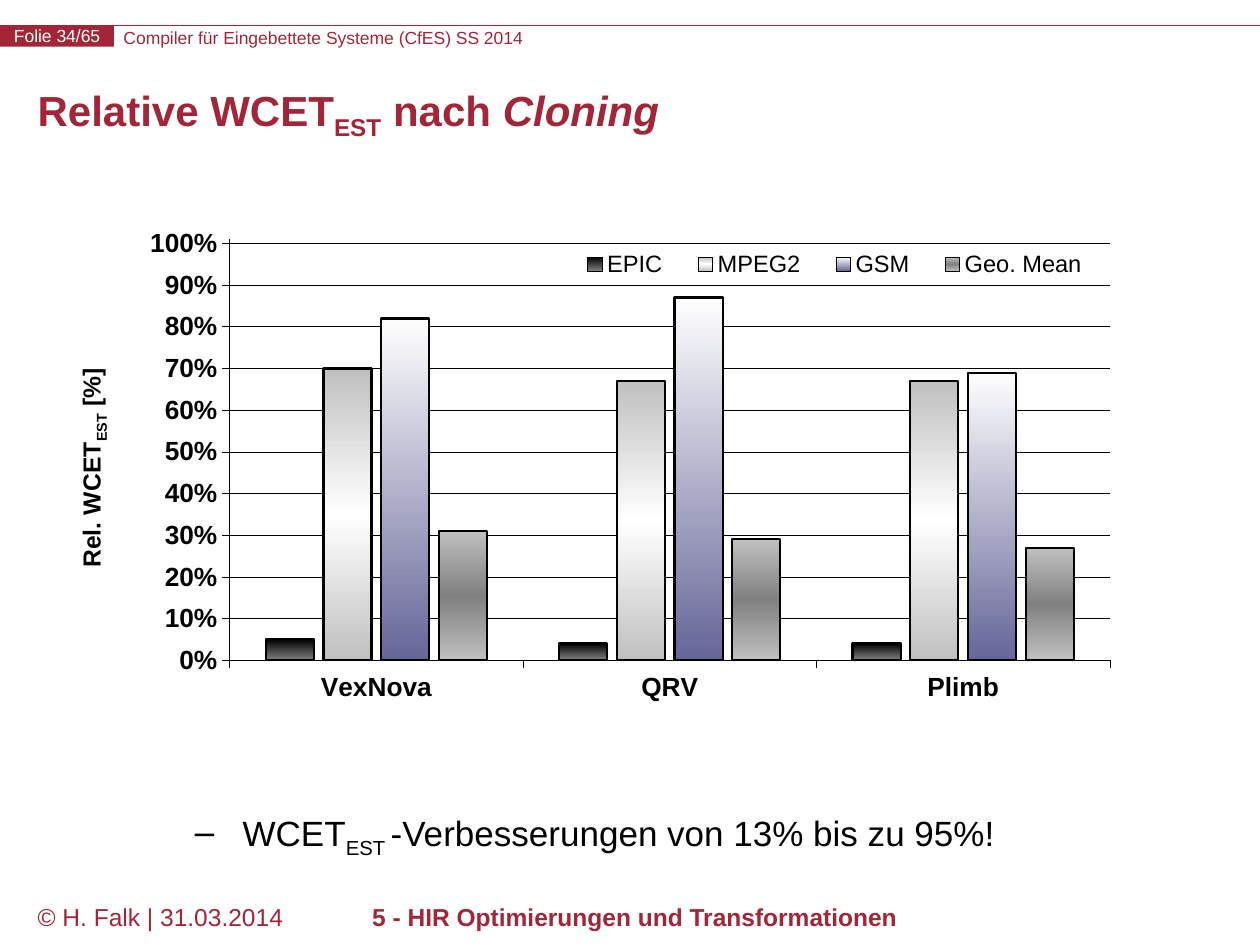
from pptx import Presentation, oxml, util as u
from pptx.chart import data
from pptx.dml import color
from pptx.enum import chart as ch, shapes, text
from pptx.oxml import ns

RED, BLACK, WHITE = "A32638", "000000", "FFFFFF"
FONT = "Arial"


def rgb(value):
    return color.RGBColor.from_string(value)


def add_span(para, words, size, ink=BLACK, bold=False, italic=False, baseline=0):
    """Append one run; baseline is a shift in percent, negative for subscript."""
    span = para.add_run()
    span.text = words
    font = span.font
    font.name, font.size, font.bold, font.italic = FONT, u.Pt(size), bold, italic
    font.color.rgb = rgb(ink)
    if baseline:
        span._r.get_or_add_rPr().set("baseline", str(baseline * 1000))


deck = Presentation()
deck.slide_width, deck.slide_height = u.Cm(25.4), u.Cm(19.05)
page = deck.slides.add_slide(deck.slide_layouts[6])

# Header rule and slide number
rule = page.shapes.add_connector(
    shapes.MSO_CONNECTOR.STRAIGHT, 0, u.Cm(0.51), deck.slide_width, u.Cm(0.51))
rule.line.color.rgb = rgb(RED)
rule.line.width = u.Pt(0.75)
rule._element.spPr.append(oxml.parse_xml(f"<a:effectLst {ns.nsdecls('a')}/>"))

number = page.shapes.add_shape(
    shapes.MSO_SHAPE.RECTANGLE, 0, u.Cm(0.51), u.Cm(2.3), u.Cm(0.43))
number.shadow.inherit = False
number.fill.solid()
number.fill.fore_color.rgb = rgb(RED)
number.line.fill.background()
frame = number.text_frame
frame.margin_left = frame.margin_right = frame.margin_top = frame.margin_bottom = 0
frame.word_wrap = False
frame.vertical_anchor = text.MSO_ANCHOR.MIDDLE
frame.paragraphs[0].alignment = text.PP_ALIGN.CENTER
add_span(frame.paragraphs[0], "Folie 34/65", 10, WHITE)

# Text boxes: place in cm, then runs as (words, format)
header = dict(size=10, ink=RED)
footer = dict(size=14, ink=RED)
heading = dict(size=24, ink=RED, bold=True)
body = dict(size=20)
texts = {
    "header": ((2.49, 0.54, 16.76, 0.43),
               [("Compiler für Eingebettete Systeme (CfES) SS 2014", header)]),
    "author": ((0.51, 18.06, 5.59, 1.27), [("© H. Falk | 31.03.2014", footer)]),
    "chapter": ((5.1, 18.06, 15.4, 1.27),
                [("5 - HIR Optimierungen und Transformationen", footer | dict(bold=True))]),
    "title": ((0.51, 1.52, 24.4, 1.83),
              [("Relative WCET", heading), ("EST", heading | dict(baseline=-25)),
               (" nach ", heading), ("Cloning", heading | dict(italic=True))]),
    "result": ((3.68, 16.05, 16.9, 1.27),
               [("WCET", body), ("EST ", body | dict(baseline=-25)),
                ("-Verbesserungen von 13% bis zu 95%!", body)]),
}
boxes = {}
for name, (place, spans) in texts.items():
    box = page.shapes.add_textbox(*map(u.Cm, place))
    box.text_frame.word_wrap = True
    for words, style in spans:
        add_span(box.text_frame.paragraphs[0], words, **style)
    boxes[name] = box.text_frame

frame = boxes["header"]
frame.margin_left = frame.margin_right = frame.margin_top = frame.margin_bottom = 0
boxes["chapter"].paragraphs[0].alignment = text.PP_ALIGN.CENTER
boxes["title"].vertical_anchor = text.MSO_ANCHOR.MIDDLE
boxes["title"].paragraphs[0].line_spacing = u.Pt(24)
para = boxes["result"].paragraphs[0]
para.line_spacing = 1.2
properties = para._p.get_or_add_pPr()
properties.set("marL", str(u.Cm(0.96)))
properties.set("indent", str(-u.Cm(0.96)))
properties.append(oxml.parse_xml(f'<a:buChar {ns.nsdecls("a")} char="–"/>'))

# Chart: values and gradient stops of each series
benchmarks = [
    ("EPIC", (0.05, 0.04, 0.04), (BLACK, "808080")),
    ("MPEG2", (0.7, 0.67, 0.67), ("C0C0C0", WHITE, "C0C0C0")),
    ("GSM", (0.82, 0.87, 0.69), ("FEFEFE", "666699")),
    ("Geo. Mean", (0.31, 0.29, 0.27), ("C0C0C0", "808080", "C0C0C0")),
]
chart_data = data.CategoryChartData(number_format="0%")
chart_data.categories = ["VexNova", "QRV", "Plimb"]
for name, values, _ in benchmarks:
    chart_data.add_series(name, values)
chart = page.shapes.add_chart(
    ch.XL_CHART_TYPE.COLUMN_CLUSTERED,
    *map(u.Cm, (1.45, 4.32, 20.93, 10.08)), chart_data).chart
chart.has_title = False
chart.font.name, chart.font.size = FONT, u.Pt(14.4)
chart.font.color.rgb = rgb(BLACK)

plot = chart.plots[0]
plot.vary_by_categories = False
plot.gap_width, plot.overlap = 150, -20
for series, (_, _, stops) in zip(plot.series, benchmarks):
    series.format.line.color.rgb = rgb(BLACK)
    series.format.line.width = u.Pt(1.25)
    series.format.fill.gradient()
    gradient = series._element.xpath("c:spPr/a:gradFill")[0]
    marks = "".join(
        f'<a:gs pos="{100000 * i // (len(stops) - 1)}"><a:srgbClr val="{stop}"/></a:gs>'
        for i, stop in enumerate(stops))
    gradient.getparent().replace(gradient, oxml.parse_xml(
        f'<a:gradFill {ns.nsdecls("a")}><a:gsLst>{marks}</a:gsLst>'
        '<a:lin ang="5400000" scaled="0"/></a:gradFill>'))

scale = chart.value_axis
scale.minimum_scale, scale.maximum_scale, scale.major_unit = 0, 1.01, 0.1
scale.tick_labels.number_format = "0%"
scale.tick_labels.number_format_is_linked = False
scale.has_major_gridlines = True
for axis in (chart.category_axis, scale):
    axis.major_tick_mark = ch.XL_TICK_MARK.OUTSIDE
    font = axis.tick_labels.font
    font.name, font.size, font.bold = FONT, u.Pt(15), True
    font.color.rgb = rgb(BLACK)
for item in (chart.category_axis, scale, scale.major_gridlines):
    item.format.line.color.rgb = rgb(BLACK)
    item.format.line.width = u.Pt(0.31)

axis_title = scale.axis_title
para = axis_title.text_frame.paragraphs[0]
for words, shift in (("Rel. WCET", 0), ("EST", -25), (" [%]", 0)):
    add_span(para, words, 14.1, bold=True, baseline=shift)
axis_title.text_frame._txBody.bodyPr.set("rot", "-5400000")
axis_title.text_frame._txBody.bodyPr.set("vert", "horz")

chart.has_legend = True
legend = chart.legend
legend.position = ch.XL_LEGEND_POSITION.RIGHT
legend.include_in_layout = True
legend.font.name, legend.font.size = FONT, u.Pt(13.5)
legend.font.color.rgb = rgb(BLACK)

# Manual layouts, as fractions of the chart area
plot_area = chart._chartSpace.xpath("c:chart/c:plotArea")[0]
for part, index, target, fractions in (
    (plot_area, 0, '<c:layoutTarget val="inner"/>', dict(x=0.153, y=0.05, w=0.848, h=0.842)),
    (axis_title._element, 1, "", dict(x=0, y=0.3)),
    (legend._element, 1, "", dict(x=0.47, y=0.07, w=0.53, h=0.06)),
):
    for old in part.xpath("c:layout"):
        part.remove(old)
    modes = "".join(f'<c:{key}Mode val="edge"/>' for key in "xy")
    sizes = "".join(f'<c:{key} val="{value}"/>' for key, value in fractions.items())
    part.insert(index, oxml.parse_xml(
        f'<c:layout {ns.nsdecls("c")}><c:manualLayout>{target}{modes}{sizes}'
        "</c:manualLayout></c:layout>"))

deck.save("out.pptx")
